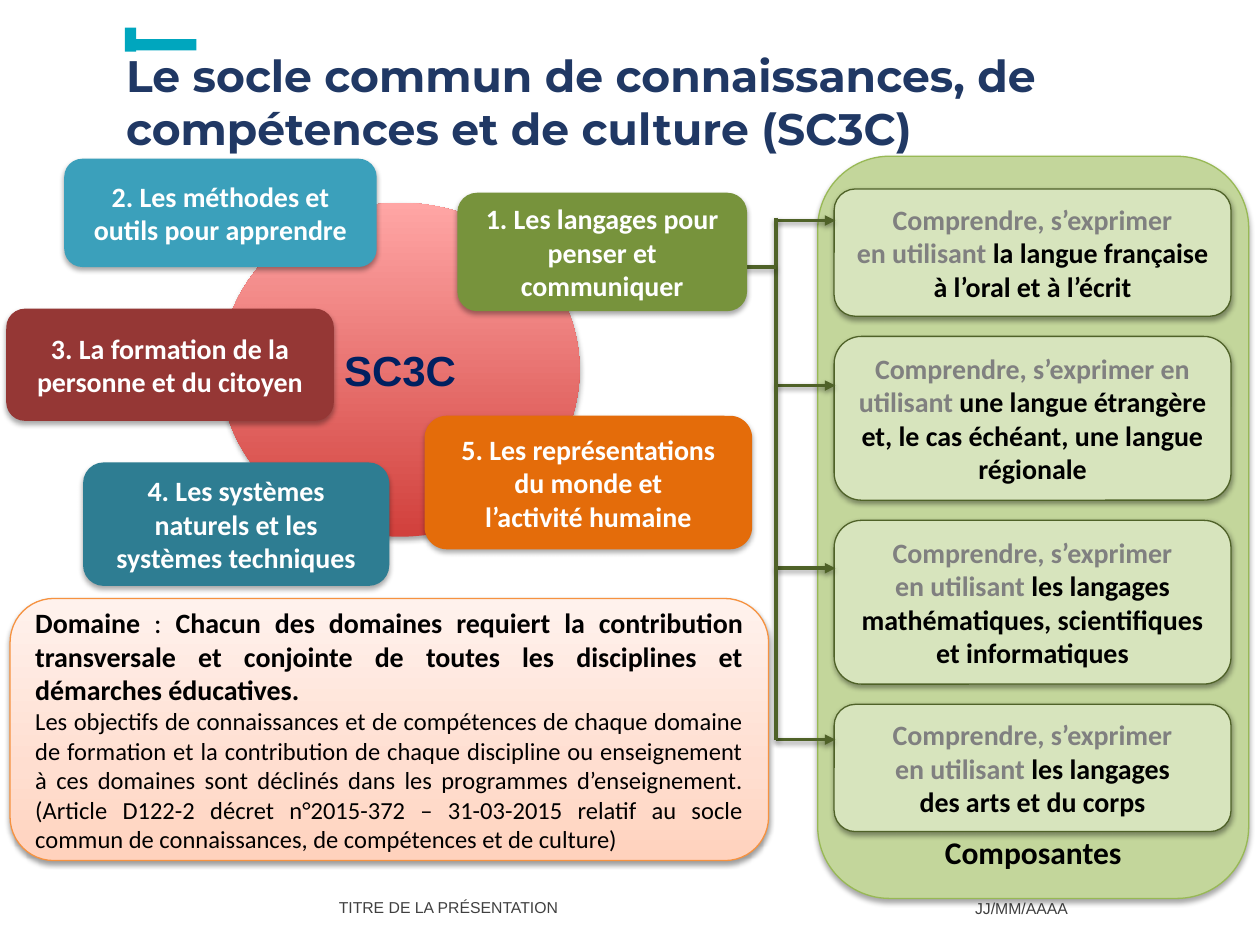
from lxml.etree import SubElement
from pptx import Presentation
from pptx.dml.color import RGBColor
from pptx.enum.shapes import MSO_CONNECTOR, MSO_SHAPE as SHAPE
from pptx.enum.text import MSO_ANCHOR as ANCHOR, MSO_AUTO_SIZE, PP_ALIGN as ALIGN
from pptx.oxml.ns import qn
from pptx.util import Inches, Pt

COLORS = {
    "navy": "203864", "cyan": "00A6BE", "footer": "404040", "black": "000000",
    "white": "FFFFFF", "grey": "808080", "label": "002060",
    "panel": "C3D69B", "panel_edge": "98B955", "card": "D7E4BD", "olive": "4F6228",
    "orange_edge": "F69240", "green": "77933C", "blue": "3BA0BB", "red": "953735",
    "teal": "2E7D92", "orange": "E46C0A",
}
PEACH = [(0, "FFD2BD"), (35, "FFDED0"), (100, "FFF2ED")]
CORAL = [(0, "D1403C"), (100, "FFA6A5")]
COLS, ROWS = 100, 75

DOMAINS = [
    ("4. Les systèmes naturels et les systèmes techniques", "teal", (6.6, 36.7, 24.3, 9.8)),
    ("3. La formation de la personne et du citoyen", "red", (0.5, 24.5, 26, 8.9)),
    ("2. Les méthodes et outils pour apprendre", "blue", (5.1, 12.6, 24.8, 8.6)),
    ("5. Les représentations du monde et\nl’activité humaine", "orange", (33.7, 33, 26, 10.6)),
    ("1. Les langages pour penser et communiquer", "green", (36.3, 15.3, 23, 9.4)),
]
# lead-in, component, card height, arrow row
COMPONENTS = [
    ("Comprendre, s’exprimer\nen utilisant ", "la langue française à l’oral et à l’écrit", 10.1, 17.5),
    ("Comprendre, s’exprimer en utilisant ",
     "une langue étrangère et, le cas échéant, une langue régionale", 13, 30.6),
    ("Comprendre, s’exprimer\nen utilisant ",
     "les langages mathématiques, scientifiques et informatiques", 13, 45.1),
    ("Comprendre, s’exprimer\nen utilisant ", "les langages\ndes arts et du corps", 10.1, 58.7),
]
CARD_TOP, CARD_GAP = 15, 1.6
TRUNK, ARROW_END = 61.6, 66.3


def rgb(name):
    return RGBColor.from_string(COLORS[name])


class Deck:
    """Holds the style and the current slide; places are (column, row, columns, rows)."""

    font, size = "Calibri", 16

    def __init__(self):
        self.prs = Presentation()
        self.prs.slide_width, self.prs.slide_height = Inches(10), Inches(7.5)
        self.s = self.prs.slides.add_slide(self.prs.slide_layouts[5])

    def x(self, col):
        return round(self.prs.slide_width * col / COLS)

    def y(self, row):
        return round(self.prs.slide_height * row / ROWS)

    def place(self, box):
        col, row, width, height = box
        return self.x(col), self.y(row), self.x(width), self.y(height)

    def set_text(self, sp, paragraphs, align=ALIGN.CENTER, anchor=ANCHOR.MIDDLE):
        """Each paragraph is a list of (text, colour, size, bold, font), the last three optional."""
        tf = sp.text_frame
        tf.word_wrap, tf.auto_size, tf.vertical_anchor = True, MSO_AUTO_SIZE.NONE, anchor
        for i, runs in enumerate(paragraphs):
            p = tf.add_paragraph() if i else tf.paragraphs[0]
            p.alignment = align
            for text, color, *rest in runs:
                size, bold, font = (*rest, *(self.size, True, self.font)[len(rest):])
                for j, line in enumerate(text.split("\n")):
                    if j:
                        p.add_line_break()
                    r = p.add_run()
                    r.text = line
                    r.font.name, r.font.size, r.font.bold = font, Pt(size), bold
                    r.font.color.rgb = rgb(color)

    def title(self, text, box):
        sp = self.s.shapes.title
        sp.left, sp.top, sp.width, sp.height = self.place(box)
        self.set_text(sp, [[(text, "navy", 25.2, True, "Montserrat")]], ALIGN.LEFT)

    def label(self, text, box):
        sp = self.s.shapes.add_textbox(*self.place(box))
        self.set_text(sp, [[(text, "footer", 9, False, "Arial")]], ALIGN.LEFT)

    def shade(self, sp, alpha, dist):
        """Give a shape or connector a soft shadow straight below it."""
        props = sp.element.spPr
        effects = props.find(qn("a:effectLst"))
        if effects is None:
            effects = SubElement(props, qn("a:effectLst"))
        shadow = SubElement(effects, qn("a:outerShdw"), blurRad=str(Pt(3.1)),
                            dist=str(Pt(dist)), dir="5400000", rotWithShape="0")
        color = SubElement(shadow, qn("a:srgbClr"), val=COLORS["black"])
        SubElement(color, qn("a:alpha"), val=str(alpha * 1000))

    def gradient(self, sp, stops):
        sp.fill.gradient()
        sp.fill.gradient_angle = 90
        gs_list = sp.element.spPr.find(qn("a:gradFill")).find(qn("a:gsLst"))
        for gs in list(gs_list):
            gs_list.remove(gs)
        for position, color in stops:
            gs = SubElement(gs_list, qn("a:gs"), pos=str(position * 1000))
            SubElement(gs, qn("a:srgbClr"), val=color)

    def shape(self, box, fill, line=None, kind=SHAPE.ROUNDED_RECTANGLE, shadow=(35, 1.8)):
        sp = self.s.shapes.add_shape(kind, *self.place(box))
        sp.shadow.inherit = False
        if isinstance(fill, list):
            self.gradient(sp, fill)
        else:
            sp.fill.solid()
            sp.fill.fore_color.rgb = rgb(fill)
        if line:
            sp.line.color.rgb, sp.line.width = rgb(line), Pt(0.75)
        else:
            sp.line.fill.background()
        if shadow:
            self.shade(sp, *shadow)
        return sp

    def line(self, start, end, arrow=False):
        cx = self.s.shapes.add_connector(MSO_CONNECTOR.STRAIGHT, self.x(start[0]), self.y(start[1]),
                                         self.x(end[0]), self.y(end[1]))
        cx.line.color.rgb, cx.line.width = rgb("olive"), Pt(2)
        if arrow:
            SubElement(cx.element.spPr.find(qn("a:ln")), qn("a:tailEnd"), type="triangle")
        self.shade(cx, 38, 1.6)


def main():
    deck = Deck()
    deck.label("TITRE DE LA PRÉSENTATION", (25.9, 70, 38.8, 4))
    deck.label("JJ/MM/AAAA", (76.4, 70.1, 12.7, 4))
    deck.title("Le socle commun de connaissances, de compétences et de culture (SC3C)",
               (9, 3.8, 90.4, 8.5))
    for bar in ((9.9, 2.2, 0.9, 1.9), (10.3, 3.1, 5.3, 0.9)):
        deck.shape(bar, "cyan", kind=SHAPE.RECTANGLE, shadow=None)

    note = deck.shape((0.8, 47.5, 60.2, 20.8), PEACH, "orange_edge", shadow=(38, 1.6))
    deck.set_text(note, [
        [("Domaine", "black"), (" : ", "black", 16, False),
         ("Chacun des domaines requiert la contribution transversale et conjointe de toutes "
          "les disciplines et démarches éducatives.", "black")],
        [("Les objectifs de connaissances et de compétences de chaque domaine de formation et la "
          "contribution de chaque discipline ou enseignement à ces domaines sont déclinés dans les "
          "programmes d’enseignement. (Article D122-2 décret n°2015-372 – 31-03-2015 relatif au "
          "socle commun de connaissances, de compétences et de culture)", "black", 14, False)],
    ], ALIGN.JUSTIFY)

    panel = deck.shape((64.9, 12.4, 34.2, 58.9), "panel", "panel_edge")
    deck.set_text(panel, [[("Composantes", "black", 18)]], anchor=ANCHOR.BOTTOM)
    top = CARD_TOP
    for lead, component, height, _ in COMPONENTS:
        card = deck.shape((66.2, top, 31.5, height), "card", "olive", shadow=(38, 1.6))
        deck.set_text(card, [[(lead, "grey"), (component, "black")]])
        top += height + CARD_GAP

    for *_, row in COMPONENTS:
        deck.line((TRUNK, row), (ARROW_END, row), arrow=True)
    deck.line((TRUNK, 17.3), (TRUNK, COMPONENTS[-1][-1]))
    deck.line((54.9, 21.2), (TRUNK, 21.2))

    core = deck.shape((17.5, 16.1, 28.5, 26.5), CORAL, kind=SHAPE.OVAL)
    deck.set_text(core, [[("SC3C", "label", 24, True, "Arial")]])
    for text, color, box in DOMAINS:
        deck.set_text(deck.shape(box, color), [[(text, "white")]])

    deck.prs.save("out.pptx")


if __name__ == "__main__":
    main()
